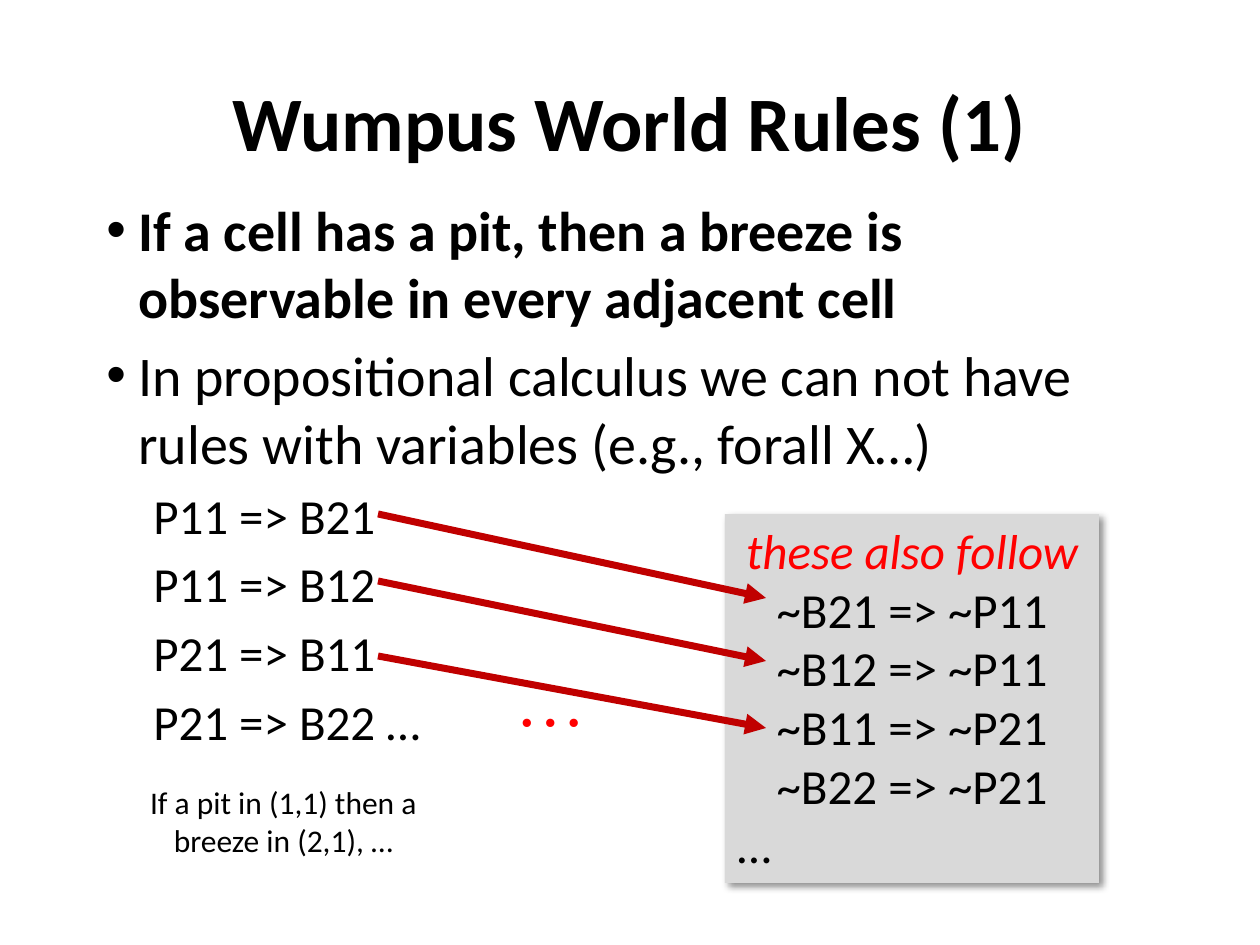
from dataclasses import dataclass

from pptx import Presentation
from pptx.dml.color import RGBColor
from pptx.enum.shapes import MSO_CONNECTOR as Connector, MSO_SHAPE as Shape
from pptx.enum.text import MSO_ANCHOR as Anchor, PP_ALIGN as Align
from pptx.oxml import parse_xml
from pptx.oxml.ns import nsdecls
from pptx.oxml.xmlchemy import OxmlElement
from pptx.util import Emu, Pt

EMU_PER_PX = 914400 / 126


@dataclass(frozen=True)
class Theme:
    font: str = "Calibri"
    dots_font: str = "Times New Roman"
    ink: str = "000000"
    accent: str = "FF0000"
    arrow: str = "C00000"
    panel: str = "D9D9D9"
    title: int = 44
    body: int = 32
    rule: int = 28
    note: int = 18
    dots: int = 40
    arrow_width: int = 4


THEME = Theme()

STATEMENTS = [
    ("If a cell has a pit, then a breeze is observable in every adjacent cell", True),
    ("In propositional calculus we can not have rules with variables "
     "(e.g., forall X…)", False),
]
RULES = ["P11 => B21", "P11 => B12", "P21 => B11", "P21 => B22 …"]
CONTRAPOSITIVES = ["~B21 => ~P11", "~B12 => ~P11", "~B11 => ~P21", "~B22 => ~P21"]
ARROW_ENDS = [(514, 598), (581, 661), (656, 728)]


def px(length):
    return Emu(round(length * EMU_PER_PX))


def element(parent, tag, **attributes):
    child = OxmlElement(tag)
    for name, value in attributes.items():
        child.set(name, str(value))
    parent.append(child)
    return child


def add_frame(slide, box, wrap=True):
    frame = slide.shapes.add_textbox(*map(px, box)).text_frame
    frame.word_wrap = wrap
    return frame


def write(paragraph, text, size, color=THEME.ink, font=THEME.font,
          bold=False, italic=False, align=Align.LEFT):
    paragraph.text = text
    paragraph.alignment = align
    for run in paragraph.runs:
        run.font.name = font
        run.font.size = Pt(size)
        run.font.bold = bold
        run.font.italic = italic
        run.font.color.rgb = RGBColor.from_string(color)


def next_paragraph(frame):
    first = frame.paragraphs[0]
    return first if not first.runs else frame.add_paragraph()


def set_layout(paragraph, margin, indent=0, bullet=None):
    """Indent a body paragraph and put a fifth of a line above it."""
    properties = paragraph._p.get_or_add_pPr()
    properties.set("marL", str(px(margin)))
    properties.set("indent", str(px(indent)))
    element(element(properties, "a:spcBef"), "a:spcPct", val=20000)
    if bullet:
        element(properties, "a:buFont", typeface="Arial")
        element(properties, "a:buChar", char=bullet)
    else:
        element(properties, "a:buNone")


def add_body(slide, box):
    frame = add_frame(slide, box)
    for text, bold in STATEMENTS:
        paragraph = next_paragraph(frame)
        write(paragraph, text, THEME.body, bold=bold)
        set_layout(paragraph, 32, -32, "•")
    for rule in RULES:
        paragraph = next_paragraph(frame)
        write(paragraph, rule, THEME.rule)
        set_layout(paragraph, 47)


def add_panel(slide, box):
    panel = slide.shapes.add_shape(Shape.RECTANGLE, *map(px, box))
    panel.fill.solid()
    panel.fill.fore_color.rgb = RGBColor.from_string(THEME.panel)
    panel.line.fill.background()
    panel._element.spPr.append(parse_xml(
        f'<a:effectLst {nsdecls("a")}>'
        f'<a:outerShdw blurRad="{Pt(4)}" dist="{Pt(3)}" dir="2700000" algn="tl" '
        f'rotWithShape="0"><a:srgbClr val="{THEME.ink}"><a:alpha val="43000"/>'
        '</a:srgbClr></a:outerShdw></a:effectLst>'))

    frame = panel.text_frame
    frame.word_wrap = False
    frame.vertical_anchor = Anchor.TOP
    write(next_paragraph(frame), "these also follow", THEME.rule, THEME.accent,
          italic=True, align=Align.CENTER)
    for rule in CONTRAPOSITIVES:
        write(next_paragraph(frame), rule, THEME.rule, align=Align.CENTER)
    write(next_paragraph(frame), "…", THEME.rule)


def add_arrow(slide, start, end):
    arrow = slide.shapes.add_connector(Connector.STRAIGHT, *map(px, start + end))
    arrow.line.color.rgb = RGBColor.from_string(THEME.arrow)
    arrow.line.width = Pt(THEME.arrow_width)
    element(arrow.line._get_or_add_ln(), "a:tailEnd", type="triangle")
    element(arrow._element.spPr, "a:effectLst")


def main():
    deck = Presentation()
    deck.slide_width, deck.slide_height = px(1260), px(945)
    slide = deck.slides.add_slide(deck.slide_layouts[6])

    # Title
    title = add_frame(slide, (94, 42, 1071, 157))
    title.vertical_anchor = Anchor.MIDDLE
    write(title.paragraphs[0], "Wumpus World Rules (1)", THEME.title,
          bold=True, align=Align.CENTER)

    # Statements and the rules without variables
    add_body(slide, (94, 189, 1071, 714))

    # Reading of the first rule
    note = add_frame(slide, (126, 777, 315, 89))
    write(note.paragraphs[0], "If a pit in (1,1) then a breeze in (2,1), …",
          THEME.note, align=Align.CENTER)

    # Contrapositives, each reached from its rule
    add_panel(slide, (725, 514, 374, 369))
    for rule_y, contrapositive_y in ARROW_ENDS:
        add_arrow(slide, (378, rule_y), (766, contrapositive_y))

    # Further rules
    dots = add_frame(slide, (503, 650, 96, 97), wrap=False)
    write(dots.paragraphs[0], "…", THEME.dots, THEME.accent, THEME.dots_font)

    deck.save("out.pptx")


if __name__ == "__main__":
    main()
